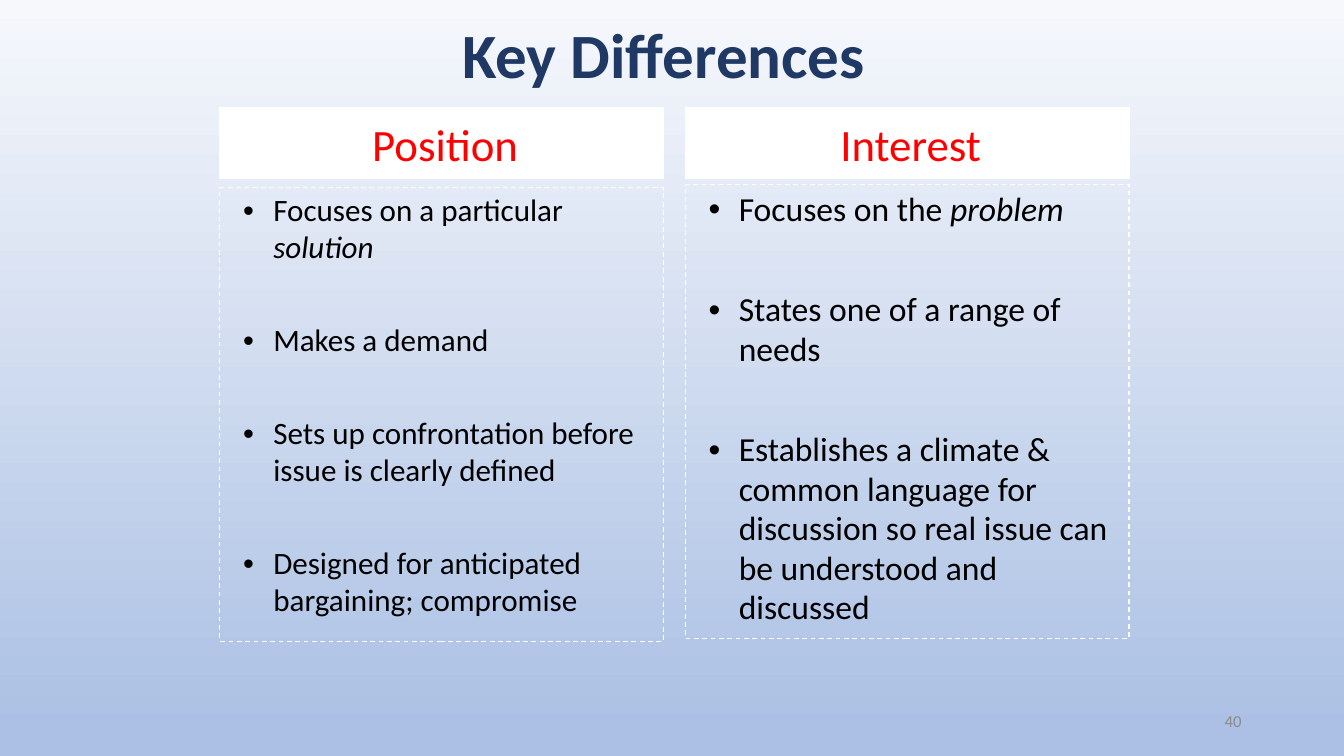
from pptx import Presentation
from pptx.dml.color import RGBColor
from pptx.enum.dml import MSO_LINE
from pptx.enum.text import MSO_ANCHOR, MSO_AUTO_SIZE, PP_ALIGN
from pptx.oxml.ns import qn
from pptx.util import Pt
from lxml.etree import SubElement

NAVY = RGBColor(0x20, 0x38, 0x64)
RED = RGBColor(0xFF, 0x00, 0x00)
BLACK = RGBColor(0x00, 0x00, 0x00)
WHITE = RGBColor(0xFF, 0xFF, 0xFF)
GRAY = RGBColor(0x8C, 0x8C, 0x8C)
SKY_TOP = RGBColor(0xF6, 0xF8, 0xFC)
SKY_BOTTOM = RGBColor(0xAB, 0xC0, 0xE4)


def place(box, left, top, width, height, anchor):
    box.left, box.top, box.width, box.height = Pt(left), Pt(top), Pt(width), Pt(height)
    box.text_frame.word_wrap = True
    box.text_frame.auto_size = MSO_AUTO_SIZE.NONE
    box.text_frame.vertical_anchor = anchor


def style(paragraph, size, color, bold=False):
    for run in paragraph.runs:
        run.font.name = "Calibri"
        run.font.size = Pt(size)
        run.font.bold = bold
        run.font.color.rgb = color


prs = Presentation()
prs.slide_width, prs.slide_height = Pt(960), Pt(540)
slide = prs.slides.add_slide(prs.slide_layouts.get_by_name("Comparison"))

sky = slide.background.fill
sky.gradient()
sky.gradient_angle = 270
for stop, position, color in zip(sky.gradient_stops, (0, 0.97), (SKY_TOP, SKY_BOTTOM)):
    stop.position = position
    stop.color.rgb = color

title = slide.shapes.title
place(title, 150, 6.5, 648, 70, MSO_ANCHOR.MIDDLE)
title.text_frame.text = "Key Differences"
title_line = title.text_frame.paragraphs[0]
title_line.alignment = PP_ALIGN.CENTER
title_line.line_spacing = 0.9
style(title_line, 45, NAVY, bold=True)

columns = [
    ("Position", 157, 134, 22.2, 40.5, [
        ("Focuses on a particular ", "solution"),
        ("Makes a demand",),
        ("Sets up confrontation before issue is clearly defined",),
        ("Designed for anticipated bargaining; compromise",),
    ]),
    ("Interest", 489.5, 132, 24, 43.5, [
        ("Focuses on the ", "problem"),
        ("States one of a range of needs",),
        ("Establishes a climate & common language for discussion "
         "so real issue can be understood and discussed",),
    ]),
]

for column, (name, left, top, size, gap, points) in enumerate(columns):
    heading = slide.placeholders[1 + 2 * column]
    place(heading, left, 77, 317, 50.5, MSO_ANCHOR.MIDDLE)
    heading.fill.solid()
    heading.fill.fore_color.rgb = WHITE
    heading.text_frame.text = name
    heading_line = heading.text_frame.paragraphs[0]
    heading_line.alignment = PP_ALIGN.CENTER
    heading_line._p.get_or_add_pPr().set("marL", str(Pt(5)))
    style(heading_line, 32, RED)

    details = slide.placeholders[2 + 2 * column]
    place(details, left, top, 317, 324, MSO_ANCHOR.TOP)
    details.line.dash_style = MSO_LINE.DASH
    for outlined in (heading, details):
        outlined.line.color.rgb = WHITE
        outlined.line.width = Pt(0.85)

    for number, pieces in enumerate(points):
        frame = details.text_frame
        point = frame.add_paragraph() if number else frame.paragraphs[0]
        properties = point._p.get_or_add_pPr()
        properties.set("marL", str(Pt(31)))
        properties.set("indent", str(Pt(-21.6)))
        SubElement(properties, qn("a:buFont")).set("typeface", "Arial")
        SubElement(properties, qn("a:buChar")).set("char", "•")
        point.space_before = Pt(gap if number else 0)
        point.line_spacing = 0.98
        for piece in pieces:
            point.add_run().text = piece
        style(point, size, BLACK)
        for emphasis in point.runs[1:]:
            emphasis.font.italic = True

page_number = slide.shapes.add_textbox(0, 0, 0, 0)
place(page_number, 678, 500.5, 216, 28.8, MSO_ANCHOR.MIDDLE)
page_number.text_frame.text = "40"
page_line = page_number.text_frame.paragraphs[0]
page_line.alignment = PP_ALIGN.RIGHT
style(page_line, 12, GRAY)

prs.save("out.pptx")
